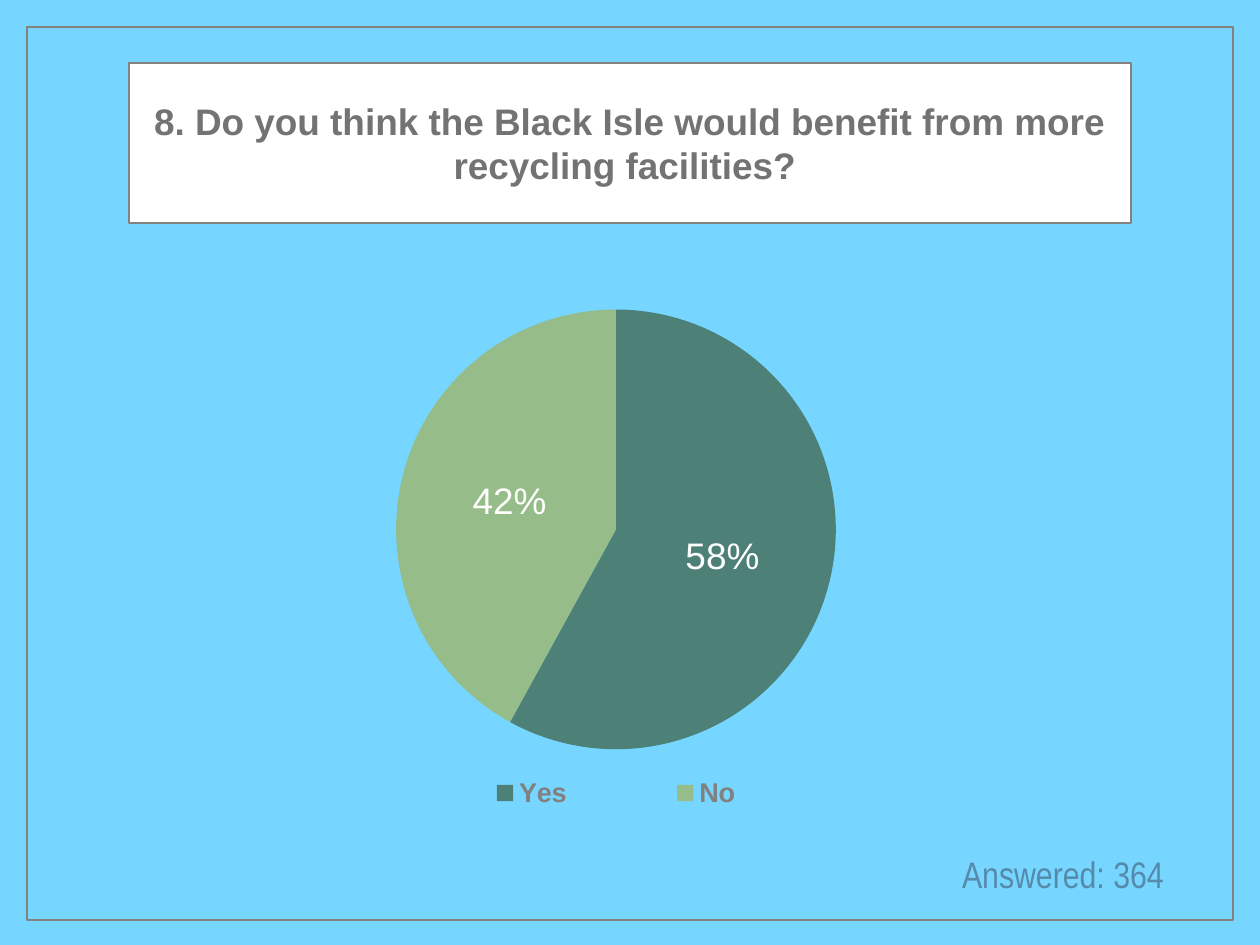
import lxml.etree
import pptx
import pptx.chart.data
import pptx.dml.color
import pptx.enum.chart
import pptx.enum.shapes
import pptx.enum.text
import pptx.oxml.ns
import pptx.util

PX = 10320  # EMU in one px
COLORS = {
    "sky": "76D6FF",
    "border": "83827D",
    "white": "FFFFFF",
    "question": "737373",
    "legend": "818181",
    "answered": "558AAB",
    "yes": "4D8178",
    "no": "95BC89",
}
ANSWERS = {"Yes": 58, "No": 42}


def color(name):
    return pptx.dml.color.RGBColor.from_string(COLORS[name])


def emu(box):
    return [pptx.util.Emu(length * PX) for length in box]


def style_font(font, size, ink, name="Arial", bold=False):
    font.name = name
    font.size = pptx.util.Pt(size)
    font.bold = bold
    font.color.rgb = color(ink)


def write_text(shape, text, **style):
    frame = shape.text_frame
    frame.word_wrap = True
    frame.vertical_anchor = pptx.enum.text.MSO_ANCHOR.MIDDLE
    frame.margin_left = frame.margin_right = pptx.util.Inches(0.06)
    frame.margin_top = frame.margin_bottom = pptx.util.Inches(0.06)
    para = frame.paragraphs[0]
    para.alignment = pptx.enum.text.PP_ALIGN.CENTER
    span = para.add_run()
    span.text = text
    style_font(span.font, **style)


def add_panel(page, box, fill=None):
    panel = page.shapes.add_shape(pptx.enum.shapes.MSO_SHAPE.RECTANGLE, *emu(box))
    panel.shadow.inherit = False
    if fill:
        panel.fill.solid()
        panel.fill.fore_color.rgb = color(fill)
    else:
        panel.fill.background()
    panel.line.color.rgb = color("border")
    panel.line.width = pptx.util.Pt(2)
    return panel


def add_question(page, box):
    panel = add_panel(page, box, fill="white")
    write_text(panel, "8. Do you think the Black Isle would benefit from more recycling facilities? ",
               size=30, ink="question", bold=True)


def set_layout(parent, index, inner=False, **fractions):
    """Place a chart part by fractions of the chart's width and height."""
    qn = pptx.oxml.ns.qn
    for old in parent.findall(qn("c:layout")):
        parent.remove(old)
    layout = lxml.etree.Element(qn("c:layout"))
    manual = lxml.etree.SubElement(layout, qn("c:manualLayout"))
    settings = {"layoutTarget": "inner"} if inner else {}
    settings.update(xMode="edge", yMode="edge", **fractions)
    for tag, value in settings.items():
        lxml.etree.SubElement(manual, qn("c:" + tag)).set("val", str(value))
    parent.insert(index, layout)


def add_pie(page, box):
    data = pptx.chart.data.CategoryChartData()
    data.categories = list(ANSWERS)
    data.add_series("Series 1", list(ANSWERS.values()))
    kind = pptx.enum.chart.XL_CHART_TYPE.PIE
    chart = page.shapes.add_chart(kind, *emu(box), data).chart
    chart.has_title = False
    style_font(chart.font, size=10, ink="answered")

    # Slices
    plot = chart.plots[0]
    plot.vary_by_categories = True
    for index, name in enumerate(("yes", "no")):
        slice_format = plot.series[0].points[index].format
        slice_format.fill.solid()
        slice_format.fill.fore_color.rgb = color(name)
        slice_format.line.fill.background()

    # Percent labels
    plot.has_data_labels = True
    labels = plot.data_labels
    labels.number_format = "#,##0%"
    labels.number_format_is_linked = False
    labels.show_value = False
    labels.show_percentage = True
    labels.position = pptx.enum.chart.XL_LABEL_POSITION.CENTER
    style_font(labels.font, size=30, ink="white")

    # Legend
    chart.has_legend = True
    legend = chart.legend
    legend.position = pptx.enum.chart.XL_LEGEND_POSITION.BOTTOM
    legend.include_in_layout = True
    style_font(legend.font, size=22, ink="legend", bold=True)

    # Pie and legend share one column
    column = {"x": 0.27, "w": 0.46}
    plot_area = chart.element.find(".//" + pptx.oxml.ns.qn("c:plotArea"))
    legend_part = chart.element.find(".//" + pptx.oxml.ns.qn("c:legend"))
    set_layout(plot_area, 0, inner=True, x=column["x"], y=0.005, w=column["w"], h=0.864)
    set_layout(legend_part, 1, x=column["x"], y=0.91, w=column["w"], h=0.09)


def add_answered(page, box):
    note = page.shapes.add_textbox(*emu(box))
    write_text(note, "Answered: 364", size=30, ink="answered", name="Arial Narrow")


def main():
    deck = pptx.Presentation()
    deck.slide_width, deck.slide_height = emu((1260, 945))
    page = deck.slides.add_slide(deck.slide_layouts[6])
    page.background.fill.solid()
    page.background.fill.fore_color.rgb = color("sky")

    add_panel(page, (27, 27, 1206, 893))
    add_question(page, (129, 63, 1002, 160))
    add_pie(page, (136, 307, 960, 509))
    add_answered(page, (907, 847, 312, 54))
    deck.save("out.pptx")


if __name__ == "__main__":
    main()
